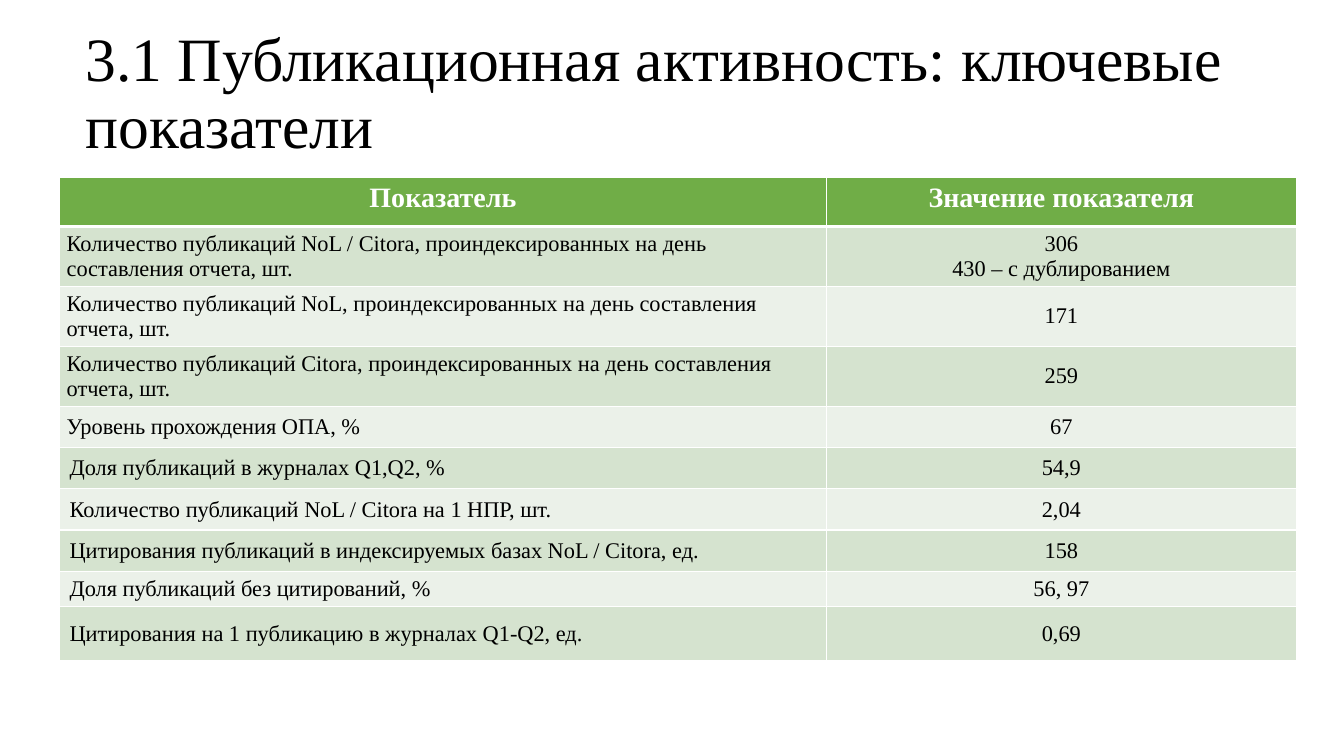
import pptx
import pptx.util
import pptx.dml.color
import pptx.enum.text
import pptx.oxml
import pptx.oxml.ns
from dataclasses import dataclass

Cm, Pt = pptx.util.Cm, pptx.util.Pt
ALIGN, ANCHOR = pptx.enum.text.PP_ALIGN, pptx.enum.text.MSO_ANCHOR


@dataclass(frozen=True)
class Theme:
    font: str = "Times New Roman"
    text: str = "000000"
    white: str = "FFFFFF"
    header: str = "70AD47"
    bands: tuple = ("D5E3CF", "EBF1E9")
    title_size: int = 44
    header_size: int = 20
    body_size: int = 16


THEME = Theme()
TITLE = "3.1 Публикационная активность: ключевые показатели"
HEADINGS = ("Показатель", "Значение показателя")

# Indicator, value lines, row height in cm
INDICATORS = [
    ("Количество публикаций NoL / Citora, проиндексированных на день составления отчета, шт.",
     ["306", "430 – с дублированием"], 1.04),
    ("Количество публикаций NoL, проиндексированных на день составления отчета, шт.",
     ["171"], 1.04),
    ("Количество публикаций Citora, проиндексированных на день составления отчета, шт.",
     ["259"], 1.04),
    ("Уровень прохождения ОПА, %", ["67"], 1.04),
    ("Доля публикаций в журналах Q1,Q2, %", ["54,9"], 1.04),
    ("Количество публикаций NoL / Citora на 1 НПР, шт.", ["2,04"], 1.04),
    ("Цитирования публикаций в индексируемых базах NoL / Citora, ед.", ["158"], 1.04),
    ("Доля публикаций без цитирований, %", ["56, 97"], 0.89),
    ("Цитирования на 1 публикацию в журналах Q1-Q2, ед.", ["0,69"], 1.35),
]
HEADER_HEIGHT = 1.24
VALUE_SHARE = 0.38
NARROW_INSET_ROWS = 4


def rgb(color):
    return pptx.dml.color.RGBColor.from_string(color)


def write(tf, lines, size, color, align, bold=False):
    for i, line in enumerate(lines):
        p = tf.add_paragraph() if i else tf.paragraphs[0]
        p.alignment = align
        r = p.add_run()
        r.text = line
        r.font.name, r.font.size, r.font.bold = THEME.font, Pt(size), bold
        r.font.color.rgb = rgb(color)


def set_borders(cell, bottom=1):
    tcPr = cell._tc.get_or_add_tcPr()
    widths = {"lnL": 1, "lnR": 1, "lnT": 1, "lnB": bottom}
    for i, (side, width) in enumerate(widths.items()):
        tcPr.insert(i, pptx.oxml.parse_xml(
            f'<a:{side} {pptx.oxml.ns.nsdecls("a")} w="{Pt(width)}">'
            f'<a:solidFill><a:srgbClr val="{THEME.white}"/></a:solidFill></a:{side}>'))


def fill_cell(cell, color, bottom=1):
    cell.fill.solid()
    cell.fill.fore_color.rgb = rgb(color)
    set_borders(cell, bottom)


def add_title(s, x, y, w, h):
    sp = s.shapes.title
    sp.left, sp.top, sp.width, sp.height = Cm(x), Cm(y), Cm(w), Cm(h)
    tf = sp.text_frame
    tf.word_wrap = True
    tf.auto_size = pptx.enum.text.MSO_AUTO_SIZE.NONE
    tf.vertical_anchor = ANCHOR.MIDDLE
    write(tf, [TITLE], THEME.title_size, THEME.text, ALIGN.LEFT)
    tf.paragraphs[0].line_spacing = 0.9


def add_indicator_table(s, x, y, w, h):
    frame = s.shapes.add_table(len(INDICATORS) + 1, 2, Cm(x), Cm(y), Cm(w), Cm(h))
    table = frame.table
    for column, share in zip(table.columns, (1 - VALUE_SHARE, VALUE_SHARE)):
        column.width = Cm(w * share)

    # Header row
    table.rows[0].height = Cm(HEADER_HEIGHT)
    for cell, heading in zip(table.rows[0].cells, HEADINGS):
        fill_cell(cell, THEME.header, bottom=3)
        write(cell.text_frame, [heading], THEME.header_size, THEME.white, ALIGN.CENTER, bold=True)

    # Banded body rows
    for i, (name, values, height) in enumerate(INDICATORS):
        row = table.rows[i + 1]
        row.height = Cm(height)
        for cell, lines, align in zip(row.cells, ([name], values), (ALIGN.LEFT, ALIGN.CENTER)):
            fill_cell(cell, THEME.bands[i % 2], bottom=1)
            cell.vertical_anchor = ANCHOR.MIDDLE
            if i < NARROW_INSET_ROWS:
                cell.margin_left = cell.margin_right = Cm(0.18)
            write(cell.text_frame, lines, THEME.body_size, THEME.text, align)
    frame.height = Cm(h)


def main():
    prs = pptx.Presentation()
    prs.slide_width, prs.slide_height = Cm(33.87), Cm(19.05)
    s = prs.slides.add_slide(prs.slide_layouts[5])
    add_title(s, 1.9, 0.56, 29.21, 3.68)
    add_indicator_table(s, 1.5, 4.47, 31.17, 12.47)
    prs.save("out.pptx")


if __name__ == "__main__":
    main()
